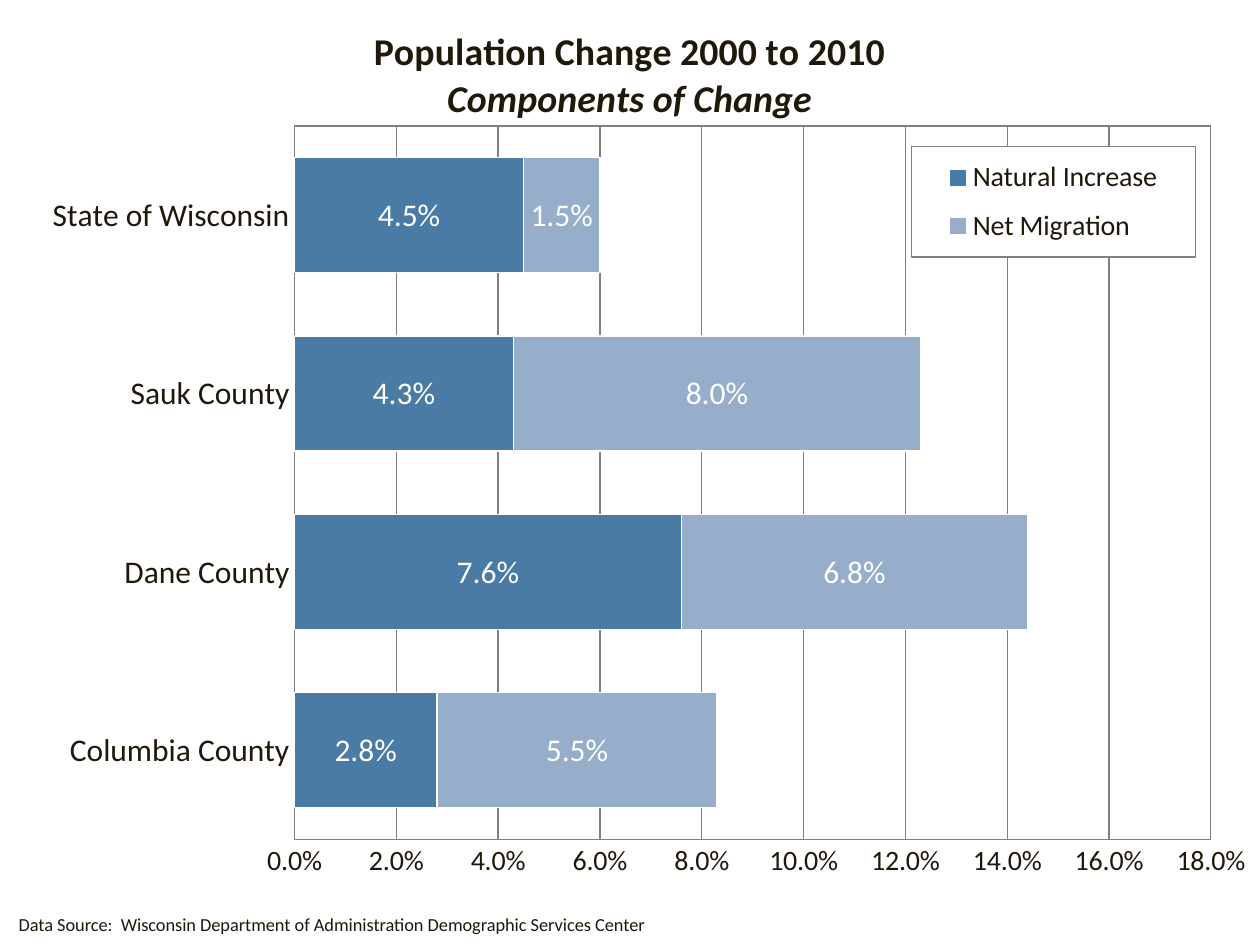
from lxml import etree
from pptx import Presentation
from pptx.chart.data import CategoryChartData
from pptx.dml.color import RGBColor
from pptx.enum import chart as kinds
from pptx.oxml import ns, parse_xml
from pptx.util import Inches, Pt

INK, WHITE, RULE = "20180A", "FFFFFF", "808080"
PERCENT = "0.0%"
COUNTIES = ["Columbia County", "Dane County", "Sauk County", "State of Wisconsin"]
COMPONENTS = [
    ("Natural Increase", [0.028, 0.076, 0.043, 0.045], "4A7BA4"),
    ("Net Migration", [0.055, 0.068, 0.08, 0.015], "96AECA"),
]


def colour(value):
    return RGBColor.from_string(value)


def style(font, size=18, color=INK, bold=False, italic=False):
    font.name = "Calibri"
    font.size = Pt(size)
    font.bold = bold
    font.italic = italic
    font.color.rgb = colour(color)


def write(paragraph, content, **form):
    run = paragraph.add_run()
    run.text = content
    style(run.font, **form)


def outline(line, color):
    line.color.rgb = colour(color)
    line.width = Pt(0.75)


def place(part, index, inner=False, **fractions):
    for old in part.findall(ns.qn("c:layout")):
        part.remove(old)
    layout = etree.Element(ns.qn("c:layout"))
    manual = etree.SubElement(layout, ns.qn("c:manualLayout"))
    settings = {"layoutTarget": "inner"} if inner else {}
    settings.update(xMode="edge", yMode="edge", **fractions)
    for name, value in settings.items():
        etree.SubElement(manual, ns.qn(f"c:{name}")).set("val", str(value))
    part.insert(index, layout)


def border():
    return parse_xml(
        f'<c:spPr {ns.nsdecls("c", "a")}><a:solidFill><a:srgbClr val="{WHITE}"/></a:solidFill>'
        f'<a:ln w="9525"><a:solidFill><a:srgbClr val="{RULE}"/></a:solidFill></a:ln></c:spPr>'
    )


def format_title(chart):
    title = chart.chart_title
    heading = title.text_frame
    write(heading.paragraphs[0], "Population Change 2000 to 2010", size=21.6, bold=True)
    write(heading.add_paragraph(), "Components of Change", size=21.6, bold=True, italic=True)
    place(title._element, 1, x=0.293, y=0.02)


def format_axes(chart):
    counties, shares = chart.category_axis, chart.value_axis
    for axis, size in ((counties, 18), (shares, 16)):
        axis.major_tick_mark = axis.minor_tick_mark = kinds.XL_TICK_MARK.NONE
        style(axis.tick_labels.font, size=size)
        outline(axis.format.line, RULE)
    shares.minimum_scale, shares.maximum_scale, shares.major_unit = 0, 0.18, 0.02
    shares.has_major_gridlines = True
    outline(shares.major_gridlines.format.line, RULE)
    shares.tick_labels.number_format = PERCENT
    shares.tick_labels.number_format_is_linked = False


def format_bars(plot):
    plot.gap_width, plot.overlap = 55, 100
    plot.vary_by_categories = False
    for series, (_, _, fill) in zip(plot.series, COMPONENTS):
        series.format.fill.solid()
        series.format.fill.fore_color.rgb = colour(fill)
        outline(series.format.line, WHITE)
        labels = series.data_labels
        labels.show_value = True
        labels.number_format = PERCENT
        labels.number_format_is_linked = False
        style(labels.font, color=WHITE)


def format_legend(chart):
    chart.has_legend = True
    legend = chart.legend
    legend.position = kinds.XL_LEGEND_POSITION.RIGHT
    legend.include_in_layout = True
    style(legend.font, size=16)
    box = legend._element
    place(box, 1, x=0.723, y=0.152, w=0.226, h=0.117)
    box.find(ns.qn("c:overlay")).addnext(border())


def add_population_chart(slide):
    data = CategoryChartData(number_format=PERCENT)
    data.categories = COUNTIES
    for name, values, _ in COMPONENTS:
        data.add_series(name, values)
    chart = slide.shapes.add_chart(
        kinds.XL_CHART_TYPE.BAR_STACKED,
        Inches(0.01), Inches(0.03), Inches(9.99), Inches(7.47), data,
    ).chart
    style(chart.font)
    format_title(chart)
    format_axes(chart)
    format_bars(chart.plots[0])
    format_legend(chart)
    plot_area = chart._chartSpace.chart.plotArea
    place(plot_area, 0, inner=True, x=0.233, y=0.13, w=0.728, h=0.758)
    plot_area.append(border())


def add_source_note(slide):
    note = slide.shapes.add_textbox(Inches(0.05), Inches(7.2), Inches(9.95), Inches(0.29))
    note.text_frame.word_wrap = True
    write(
        note.text_frame.paragraphs[0],
        "Data Source:  Wisconsin Department of Administration Demographic Services Center",
        size=10.5,
    )


def main():
    deck = Presentation()
    deck.slide_width, deck.slide_height = Inches(10), Inches(7.5)
    slide = deck.slides.add_slide(deck.slide_layouts[6])
    add_population_chart(slide)
    add_source_note(slide)
    deck.save("out.pptx")


if __name__ == "__main__":
    main()
